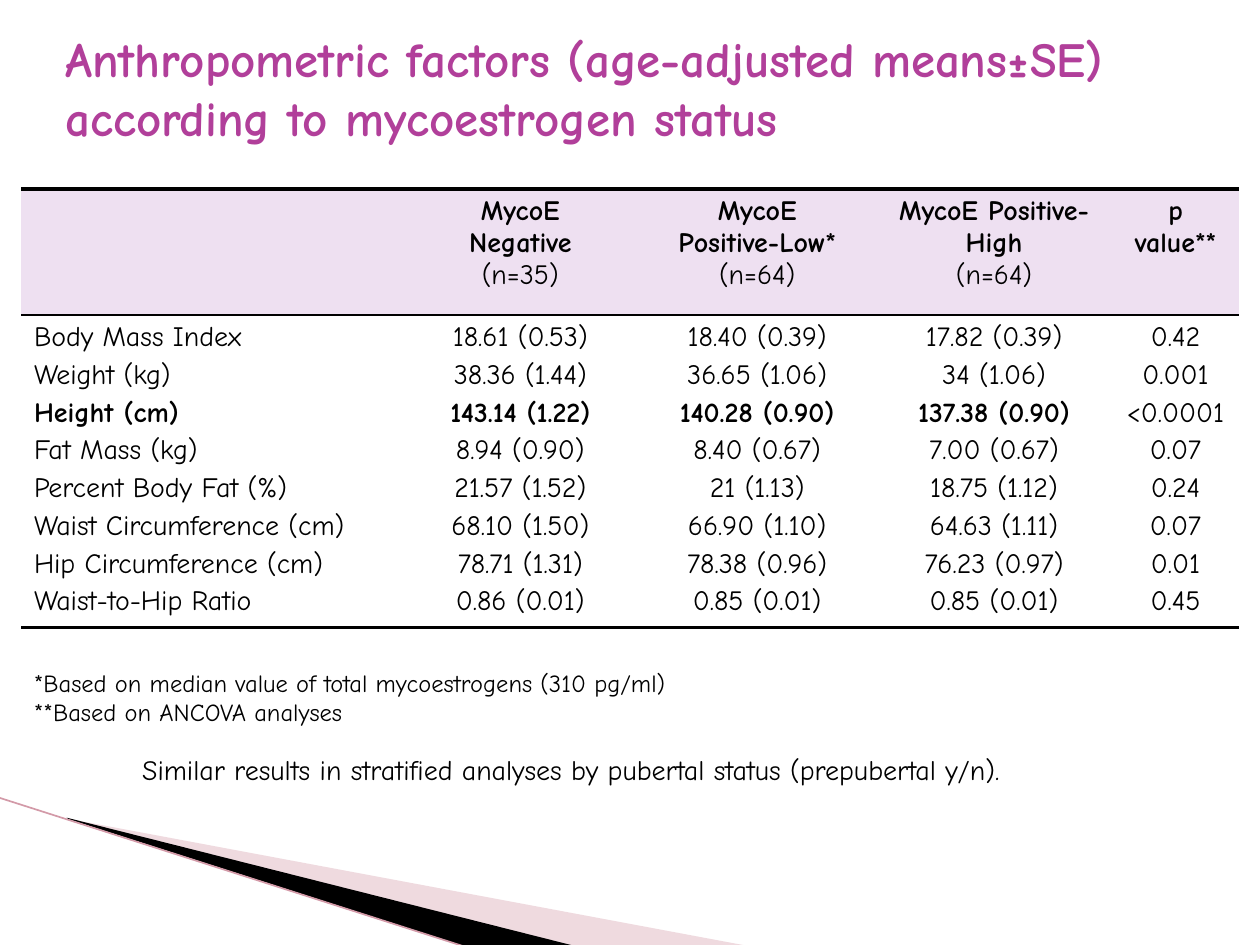
from lxml import etree
from pptx import Presentation
from pptx.dml.color import RGBColor
from pptx.enum.shapes import MSO_CONNECTOR
from pptx.enum.text import MSO_ANCHOR, PP_ALIGN
from pptx.oxml.ns import qn
from pptx.util import Inches, Pt

CENTER = PP_ALIGN.CENTER
LEFT = PP_ALIGN.LEFT
MIDDLE = MSO_ANCHOR.MIDDLE
TOP = MSO_ANCHOR.TOP
STRAIGHT = MSO_CONNECTOR.STRAIGHT

FONT = "Comic Neue"
BLACK = "000000"
PURPLE = "B13F9A"
LILAC = "EEE0F1"
PINK = "D8A3AF"
ROSE = "D39AA8"
NO_GRID_STYLE = "{2D5ABB26-0587-4C30-8999-92F81FD0307C}"

COLUMN_WIDTHS = [3.02, 1.88, 1.88, 1.88, 1]
ROW_HEIGHTS = [1, 2.48]
HEADERS = [
    [],
    ["MycoE", "Negative", "(n=35)"],
    ["MycoE", "Positive-Low*", "(n=64)"],
    ["MycoE Positive-High", "(n=64)"],
    ["p value**"],
]
MEASURES = [
    ("Body Mass Index", "18.61 (0.53)", "18.40 (0.39)", "17.82 (0.39)", "0.42"),
    ("Weight (kg)", "38.36 (1.44)", "36.65 (1.06)", "34 (1.06)", "0.001"),
    ("Height (cm)", "143.14 (1.22)", "140.28 (0.90)", "137.38 (0.90)", "<0.0001"),
    ("Fat Mass (kg)", "8.94 (0.90)", "8.40 (0.67)", "7.00 (0.67)", "0.07"),
    ("Percent Body Fat (%)", "21.57 (1.52)", "21 (1.13)", "18.75 (1.12)", "0.24"),
    ("Waist Circumference (cm)", "68.10 (1.50)", "66.90 (1.10)", "64.63 (1.11)", "0.07"),
    ("Hip Circumference (cm)", "78.71 (1.31)", "78.38 (0.96)", "76.23 (0.97)", "0.01"),
    ("Waist-to-Hip Ratio", "0.86 (0.01)", "0.85 (0.01)", "0.85 (0.01)", "0.45"),
]
BOLD_MEASURE = 2
P_VALUE_COLUMN = 4


def rgb(color):
    return RGBColor.from_string(color)


def write_lines(frame, lines, size, color=BLACK, align=LEFT, bold_lines=(), gap=0):
    """Write one paragraph per line; gap is the space between them in points."""
    for index, line in enumerate(lines):
        paragraph = frame.add_paragraph() if index else frame.paragraphs[0]
        paragraph.text = line
        paragraph.alignment = align
        if index and gap:
            paragraph.space_before = Pt(gap)
        font = paragraph.font
        font.name = FONT
        font.size = Pt(size)
        font.bold = index in bold_lines
        font.color.rgb = rgb(color)


def add_text(slide, left, top, width, height, lines, size, color=BLACK,
             bold_lines=(), anchor=TOP):
    box = slide.shapes.add_textbox(Inches(left), Inches(top), Inches(width), Inches(height))
    frame = box.text_frame
    frame.word_wrap = True
    frame.vertical_anchor = anchor
    write_lines(frame, lines, size, color, bold_lines=bold_lines)


def add_wedge(slide, points, color, opacity=100):
    start, *rest = [(Inches(x), Inches(y)) for x, y in points]
    builder = slide.shapes.build_freeform(*start)
    builder.add_line_segments(rest, close=True)
    shape = builder.convert_to_shape()
    shape.shadow.inherit = False
    shape.fill.solid()
    shape.fill.fore_color.rgb = rgb(color)
    shape.line.fill.background()
    if opacity < 100:
        color_element = shape._element.spPr.find(qn("a:solidFill"))[0]
        etree.SubElement(color_element, qn("a:alpha"), val=str(opacity * 1000))


def add_line(slide, start, end, color, width):
    points = [Inches(value) for value in (*start, *end)]
    connector = slide.shapes.add_connector(STRAIGHT, *points)
    connector.line.color.rgb = rgb(color)
    connector.line.width = Pt(width)
    etree.SubElement(connector._element.spPr, qn("a:effectLst"))


def set_borders(cell, top, bottom):
    """Draw black top and bottom borders, with widths in points."""
    properties = cell._tc.get_or_add_tcPr()
    for index, (tag, width) in enumerate((("a:lnT", top), ("a:lnB", bottom))):
        border = etree.Element(qn(tag), w=str(Pt(width)))
        fill = etree.SubElement(border, qn("a:solidFill"))
        etree.SubElement(fill, qn("a:srgbClr"), val=BLACK)
        properties.insert(index, border)


def add_measures_table(slide):
    frame = slide.shapes.add_table(
        len(ROW_HEIGHTS), len(COLUMN_WIDTHS), Inches(0.17), Inches(1.5),
        Inches(sum(COLUMN_WIDTHS)), Inches(sum(ROW_HEIGHTS)))
    table = frame.table
    table.horz_banding = False
    table._tbl.tblPr.find(qn("a:tableStyleId")).text = NO_GRID_STYLE
    for row, height in zip(table.rows, ROW_HEIGHTS):
        row.height = Inches(height)
    for index, (width, header, values) in enumerate(
            zip(COLUMN_WIDTHS, HEADERS, zip(*MEASURES))):
        table.columns[index].width = Inches(width)

        header_cell = table.cell(0, index)
        header_cell.fill.solid()
        header_cell.fill.fore_color.rgb = rgb(LILAC)
        set_borders(header_cell, 2.25, 1)
        bold_lines = [i for i, line in enumerate(header) if not line.startswith("(")]
        write_lines(header_cell.text_frame, header, 16, align=CENTER, bold_lines=bold_lines)

        body_cell = table.cell(1, index)
        body_cell.fill.background()
        set_borders(body_cell, 1, 2.25)
        write_lines(body_cell.text_frame, values, 16,
                    align=CENTER if index else LEFT,
                    bold_lines=() if index == P_VALUE_COLUMN else (BOLD_MEASURE,),
                    gap=3.2)


def main():
    presentation = Presentation()
    presentation.slide_width = Inches(10)
    presentation.slide_height = Inches(7.5)
    slide = presentation.slides.add_slide(presentation.slide_layouts[6])

    add_wedge(slide, [(0.55, 6.5), (5.95, 7.51), (4.56, 7.51)], PINK, opacity=40)
    add_wedge(slide, [(0.53, 6.49), (4.57, 7.51), (3.72, 7.52), (0.54, 6.5)], BLACK)
    add_line(slide, (-0.01, 6.33), (3.71, 7.52), ROSE, 0.95)

    add_measures_table(slide)
    add_text(slide, 0.42, 0.17, 9.25, 1.05,
             ["Anthropometric factors (age-adjusted means±SE) according to mycoestrogen status"],
             28, PURPLE, bold_lines=(0,), anchor=MIDDLE)
    add_text(slide, 0.17, 5.25, 5.6, 0.57,
             ["*Based on median value of total mycoestrogens (310 pg/ml)",
              "**Based on ANCOVA analyses"], 14)
    add_text(slide, 1.03, 5.92, 7.89, 0.37,
             ["Similar results in stratified analyses by pubertal status (prepubertal y/n)."], 16)

    presentation.save("out.pptx")


if __name__ == "__main__":
    main()
